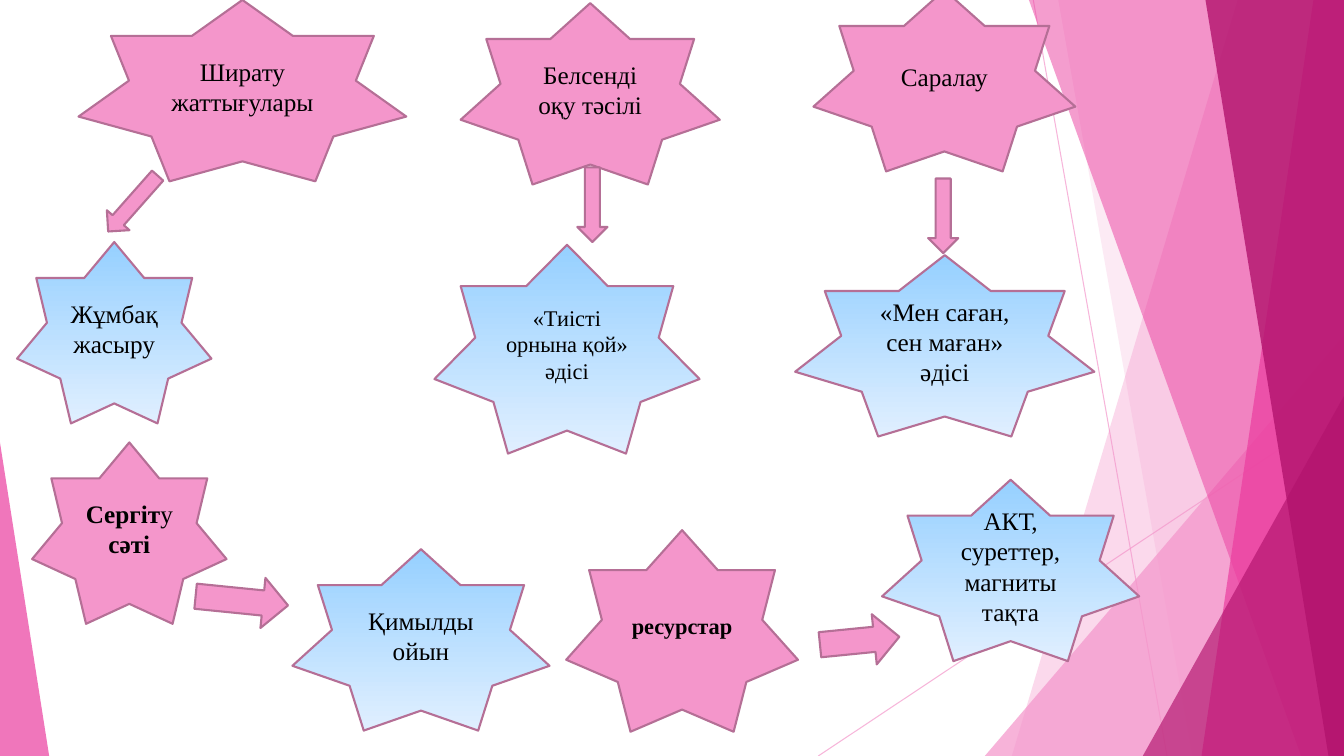
"""Build a slide of lesson stages, each paired with its teaching method."""
from collections import namedtuple

from lxml.etree import SubElement
from pptx import Presentation
from pptx.dml.color import RGBColor
from pptx.enum.shapes import MSO_CONNECTOR, MSO_SHAPE
from pptx.enum.text import MSO_ANCHOR, PP_ALIGN
from pptx.oxml.ns import qn
from pptx.util import Cm, Pt

PINK = RGBColor(0xF4, 0x96, 0xCB)
MAGENTA = RGBColor(0xEB, 0x3D, 0x9F)
CRIMSON = RGBColor(0xB2, 0x13, 0x6D)
OUTLINE = RGBColor(0xB5, 0x6F, 0x96)
SKY = RGBColor(0x96, 0xD0, 0xFF)
PALE_SKY = RGBColor(0xE0, 0xEF, 0xFF)
BLACK = RGBColor(0, 0, 0)
FONT = "Times New Roman"
SLIDE_WIDTH, SLIDE_HEIGHT = 33.87, 19.05

Box = namedtuple("Box", "left top width height")
Star = namedtuple("Star", "box size paragraphs")
Arrow = namedtuple("Arrow", "box rotation")


def plain(*lines):
    """Return one regular run per paragraph."""
    return [[(line, False)] for line in lines]


def set_opacity(shape, percent):
    """Make the shape's only colour partly transparent."""
    color = next(shape._element.spPr.iter(qn("a:srgbClr")))
    SubElement(color, qn("a:alpha")).set("val", str(percent * 1000))


def add_preset(slide, preset, origin, box):
    """Add a preset shape without shadow, offset from the origin box."""
    shape = slide.shapes.add_shape(
        preset, Cm(origin.left + box.left), Cm(origin.top + box.top),
        Cm(box.width), Cm(box.height))
    shape.shadow.inherit = False
    return shape


def paint_veil(shape, color, opacity):
    """Fill a background shape with a translucent colour."""
    shape.shadow.inherit = False
    shape.fill.solid()
    shape.fill.fore_color.rgb = color
    shape.line.fill.background()
    set_opacity(shape, opacity)


def add_ray(slide, origin, start, end):
    """Draw a thin translucent line between two points of the box."""
    connector = slide.shapes.add_connector(
        MSO_CONNECTOR.STRAIGHT,
        Cm(origin.left + start[0]), Cm(origin.top + start[1]),
        Cm(origin.left + end[0]), Cm(origin.top + end[1]))
    connector.line.color.rgb = PINK
    connector.line.width = Pt(0.75)
    set_opacity(connector, 70)
    SubElement(connector._element.spPr, qn("a:effectLst"))


def add_band(slide, origin, top_x, bottom_x, color, opacity):
    """Fill the box from a slanted left edge to its right side."""
    right, bottom = Cm(origin.left + origin.width), Cm(origin.top + origin.height)
    top = Cm(origin.top)
    builder = slide.shapes.build_freeform(Cm(origin.left + top_x), top)
    builder.add_line_segments(
        [(right, top), (right, bottom), (Cm(origin.left + bottom_x), bottom)])
    paint_veil(builder.convert_to_shape(), color, opacity)


def add_corner(slide, origin, width, height, apex, color, opacity):
    """Place a right triangle in a bottom corner, with its apex at 0 left or 1 right."""
    box = Box(apex * (origin.width - width), origin.height - height, width, height)
    shape = add_preset(slide, MSO_SHAPE.ISOSCELES_TRIANGLE, origin, box)
    shape.adjustments[0] = apex
    paint_veil(shape, color, opacity)


def add_facets(slide, box):
    """Draw the overlapping pink facets on the right of the slide."""
    add_ray(slide, box, (5.42, 0), (8.79, box.height))
    add_ray(slide, box, (box.width, 10.24), (0, box.height))
    add_band(slide, box, 10.57, 4.88, PINK, 36)
    add_band(slide, box, 6.05, 9.43, PINK, 20)
    add_corner(slide, box, 9.05, 10.59, 1, PINK, 72)
    add_band(slide, box, 5.31, 12.17, MAGENTA, 50)
    add_band(slide, box, 12.48, 9.66, MAGENTA, 70)
    add_band(slide, box, 9.76, 12.86, CRIMSON, 80)
    add_corner(slide, box, 5.07, 9.07, 1, CRIMSON, 66)


def outline(shape):
    """Give a foreground shape its border."""
    shape.line.color.rgb = OUTLINE
    shape.line.width = Pt(1.5)


def fill_pink(shape):
    """Fill the shape with solid pink."""
    shape.fill.solid()
    shape.fill.fore_color.rgb = PINK


def fill_sky(shape):
    """Fill the shape with a blue gradient that fades downwards."""
    shape.fill.gradient()
    shape.fill.gradient_angle = 270
    for stop, (position, color) in zip(shape.fill.gradient_stops,
                                       ((0, SKY), (1, PALE_SKY))):
        stop.position = position
        stop.color.rgb = color


def add_star(slide, origin, star, paint):
    """Add a seven-pointed star with centred text."""
    shape = add_preset(slide, MSO_SHAPE.STAR_7_POINT, origin, star.box)
    paint(shape)
    outline(shape)
    frame = shape.text_frame
    frame.word_wrap = True
    frame.vertical_anchor = MSO_ANCHOR.MIDDLE
    for index, runs in enumerate(star.paragraphs):
        paragraph = frame.add_paragraph() if index else frame.paragraphs[0]
        paragraph.alignment = PP_ALIGN.CENTER
        for text, bold in runs:
            run = paragraph.add_run()
            run.text = text
            run.font.name = FONT
            run.font.size = Pt(star.size)
            run.font.bold = bold
            run.font.color.rgb = BLACK


def add_stage(slide, origin, topic, method, arrow):
    """Add a pink topic star, its blue method star and the arrow between them."""
    add_star(slide, origin, topic, fill_pink)
    add_star(slide, origin, method, fill_sky)
    shape = add_preset(slide, MSO_SHAPE.DOWN_ARROW, origin, arrow.box)
    shape.rotation = arrow.rotation
    fill_pink(shape)
    outline(shape)


STAGES = (
    (Box(0.43, 0, 9.81, 10.67),
     Star(Box(1.55, 0, 8.26, 4.57), 18, plain("Ширату жаттығулары")),
     Star(Box(0, 6.1, 4.9, 4.57), 18, plain("Жұмбақ жасыру")),
     Arrow(Box(2.54, 4.19, 0.76, 1.88), 41.5)),
    (Box(10.95, 0.08, 7.19, 11.35),
     Star(Box(0.66, 0, 6.53, 4.57), 18, plain("Белсенді оқу тәсілі")),
     Star(Box(0, 6.09, 6.68, 5.26), 16, plain("«Тиісті орнына қой» әдісі")),
     Arrow(Box(3.6, 4.14, 0.76, 1.88), 0)),
    (Box(20.04, -0.25, 7.54, 11.25),
     Star(Box(0.46, 0, 6.6, 4.57), 18, plain("Саралау")),
     Star(Box(0, 6.68, 7.54, 4.57), 18, plain("«Мен саған, сен маған» әдісі")),
     Arrow(Box(3.35, 4.75, 0.76, 1.88), 0)),
    (Box(0.81, 11.15, 13.04, 7.26),
     Star(Box(0, 0, 4.9, 4.57), 18,
          [[("Сергіт", True), ("у ", False), ("сәті", True)]]),
     Star(Box(6.56, 2.69, 6.48, 4.57), 18, plain("Қимылды ойын")),
     Arrow(Box(4.65, 2.82, 1.27, 2.34), 275.7)),
    (Box(14.27, 12.09, 14.44, 6.35),
     Star(Box(0, 1.27, 5.84, 5.08), 16, [[("ресурстар", True)]]),
     Star(Box(7.96, 0, 6.48, 4.57), 18,
          plain("АКТ,", "суреттер,", "магниты", "тақта")),
     Arrow(Box(6.76, 3.05, 1.27, 2.01), 264.3)),
)


def main():
    """Create the presentation and save it."""
    presentation = Presentation()
    presentation.slide_width = Cm(SLIDE_WIDTH)
    presentation.slide_height = Cm(SLIDE_HEIGHT)
    slide = presentation.slides.add_slide(presentation.slide_layouts[6])
    add_facets(slide, Box(20.62, 0, SLIDE_WIDTH - 20.62, SLIDE_HEIGHT))
    add_corner(slide, Box(0, 0, SLIDE_WIDTH, SLIDE_HEIGHT), 1.24, 7.9, 0, MAGENTA, 70)
    for stage in STAGES:
        add_stage(slide, *stage)
    presentation.save("out.pptx")


if __name__ == "__main__":
    main()
